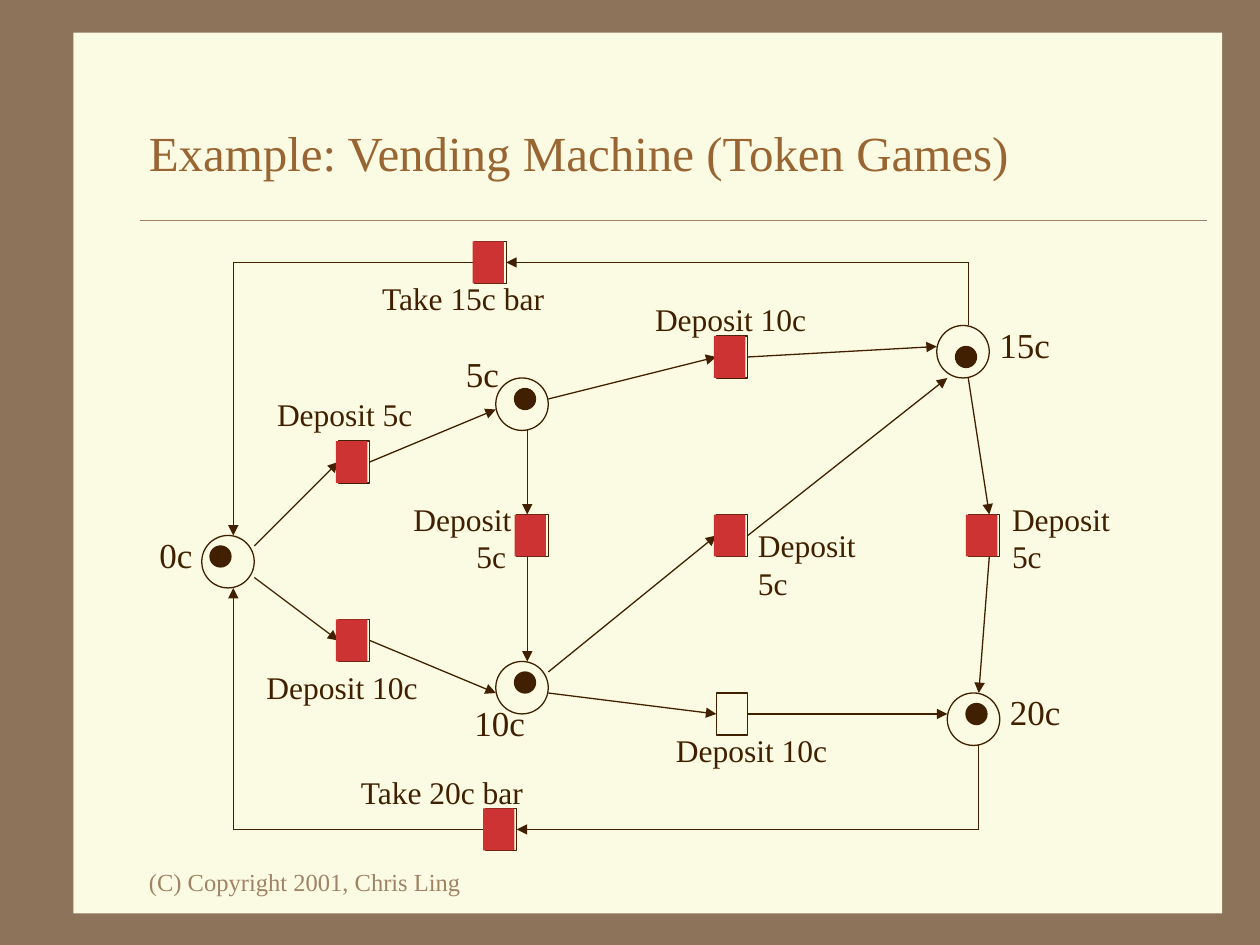
import pptx
import pptx.util
import pptx.dml.color
import pptx.enum.shapes
import pptx.enum.text
import pptx.oxml
import pptx.oxml.ns

THEME = {
    "font": "Times New Roman",
    "frame": "8C735A", "panel": "FBFAE2", "title": "996633", "muted": "A08366",
    "ink": "402000", "enabled": "CD3333",
    "title_size": 28, "place_size": 20, "label_size": 18, "footer_size": 14,
    "line": 0.75, "rule": 0.25,
}
RGB = pptx.dml.color.RGBColor.from_string
MSO = pptx.enum.shapes.MSO_SHAPE
A = pptx.oxml.ns.nsdecls("a")

prs = pptx.Presentation()
prs.slide_width, prs.slide_height = pptx.util.Inches(10), pptx.util.Inches(7.5)
COL, ROW = prs.slide_width / 120, prs.slide_height / 90
SHIFT = 0.22  # columns between the net's outlines and the grid
s = prs.slides.add_slide(prs.slide_layouts[6])


def add_shape(kind, x, y, w, h, fill=None, line=None):
    sp = s.shapes.add_shape(kind, int(x * COL), int(y * ROW), int(w * COL), int(h * ROW))
    sp.shadow.inherit = False
    if fill:
        sp.fill.solid()
        sp.fill.fore_color.rgb = RGB(THEME[fill])
    else:
        sp.fill.background()
    if line:
        sp.line.color.rgb = RGB(THEME[line])
        sp.line.width = pptx.util.Pt(THEME["line"])
    else:
        sp.line.fill.background()


def add_line(start, end, color="ink", width="line", arrow=False):
    (x1, y1), (x2, y2) = start, end
    c = s.shapes.add_connector(pptx.enum.shapes.MSO_CONNECTOR.STRAIGHT,
                               int(x1 * COL), int(y1 * ROW), int(x2 * COL), int(y2 * ROW))
    c.line.color.rgb = RGB(THEME[color])
    c.line.width = pptx.util.Pt(THEME[width])
    if arrow:
        c.line._get_or_add_ln().append(pptx.oxml.parse_xml(f'<a:tailEnd {A} type="triangle"/>'))
    c._element.spPr.append(pptx.oxml.parse_xml(f"<a:effectLst {A}/>"))


# Background, panel and rule under the title
s.background.fill.solid()
s.background.fill.fore_color.rgb = RGB(THEME["frame"])
add_shape(MSO.RECTANGLE, 7, 3.1, 109.4, 83.9, fill="panel")
add_line((13.3, 21), (115, 21), "muted", "rule")

# Places (circles): column, row of the place, then of its token
places = [((19, 51), (20, 52)), ((47, 36), (49, 37)), ((47, 63), (49, 64)),
          ((90, 66), (92, 67)), ((89, 31), (91, 33))]
for (x, y), token in places:
    add_shape(MSO.OVAL, x + SHIFT, y, 5, 5, line="ink")

# Transitions (boxes)
enabled = [(49, 49), (32, 59), (68, 49), (45, 23), (32, 42), (68, 32), (92, 49), (46, 77)]
for x, y in enabled + [(68, 66)]:
    add_shape(MSO.RECTANGLE, x + SHIFT, y, 3, 4, line="ink")

# Arcs: each runs through its points and ends in an arrowhead
arcs = [
    [(24, 52), (32, 44)], [(24, 55), (32, 61)], [(35, 44), (47, 39)], [(35, 61), (47, 66)],
    [(52, 38), (68, 34)], [(71, 34), (89, 33)], [(50, 41), (50, 49)], [(50, 53), (50, 63)],
    [(52, 64), (68, 51)], [(71, 51), (90, 36)], [(52, 66), (68, 68)], [(71, 68), (90, 68)],
    [(92, 36), (94, 49)], [(94, 53), (93, 66)],
    [(93, 71), (93, 79), (49, 79)], [(46, 79), (22, 79), (22, 56)],
    [(92, 31), (92, 25), (48, 25)], [(45, 25), (22, 25), (22, 51)],
]
for arc in arcs:
    points = [(x + SHIFT, y) for x, y in arc]
    for i in range(1, len(points)):
        add_line(points[i - 1], points[i], arrow=i == len(points) - 1)

# Texts: lines, column, row, width, height, size, colour, wrap, indent of later lines
texts = [
    (["Example: Vending Machine (Token Games)"], 13, 8, 102, 13, "title_size", "title", True, 0),
    (["(C) Copyright 2001, Chris Ling"], 13, 82, 33, 4, "footer_size", "muted", True, 0),
    (["Take 15c bar"], 35.2, 26, 23.2, 4.8, "label_size", "ink", True, 0),
    (["Take 20c bar"], 33.2, 73, 18.2, 4.8, "label_size", "ink", False, 0),
    (["Deposit 5c"], 25.2, 37, 15.5, 4.8, "label_size", "ink", False, 0),
    (["Deposit", "5c"], 38.2, 47, 13, 8.4, "label_size", "ink", True, 6),
]
for x, y in [(24.2, 63), (61.2, 28), (63.2, 69)]:
    texts.append((["Deposit 10c"], x, y, 16.9, 4.8, "label_size", "ink", False, 0))
for x, y in [(71, 49.5), (95.2, 47)]:
    texts.append((["Deposit", "5c"], x, y, 11.9, 8.4, "label_size", "ink", False, 0))
for name, x, y, w in [("0c", 14, 50.2, 5.8), ("5c", 43.2, 33, 5.8), ("10c", 44, 66.2, 7.4),
                      ("15c", 94, 30.2, 7.4), ("20c", 95, 65.2, 7.4)]:
    texts.append(([name], x, y, w, 5.1, "place_size", "ink", False, 0))

for lines, x, y, w, h, size, color, wrap, indent in texts:
    tf = s.shapes.add_textbox(int(x * COL), int(y * ROW), int(w * COL), int(h * ROW)).text_frame
    tf.text = "\n".join(lines)
    tf.word_wrap = wrap
    if size == "title_size":
        tf.vertical_anchor = pptx.enum.text.MSO_ANCHOR.MIDDLE
    if color == "ink":
        tf.auto_size = pptx.enum.text.MSO_AUTO_SIZE.SHAPE_TO_FIT_TEXT
    for i, p in enumerate(tf.paragraphs):
        if i and indent:
            p._p.get_or_add_pPr().set("marL", str(int(indent * COL)))
        r = p.runs[0]
        r.font.name = THEME["font"]
        r.font.size = pptx.util.Pt(THEME[size])
        r.font.color.rgb = RGB(THEME[color])

# Enabled transitions and tokens lie on top
for x, y in enabled:
    add_shape(MSO.RECTANGLE, x, y, 3, 4, fill="enabled")
for place, (x, y) in places:
    add_shape(MSO.OVAL, x, y, 2, 2, fill="ink", line="ink")

prs.save("out.pptx")
